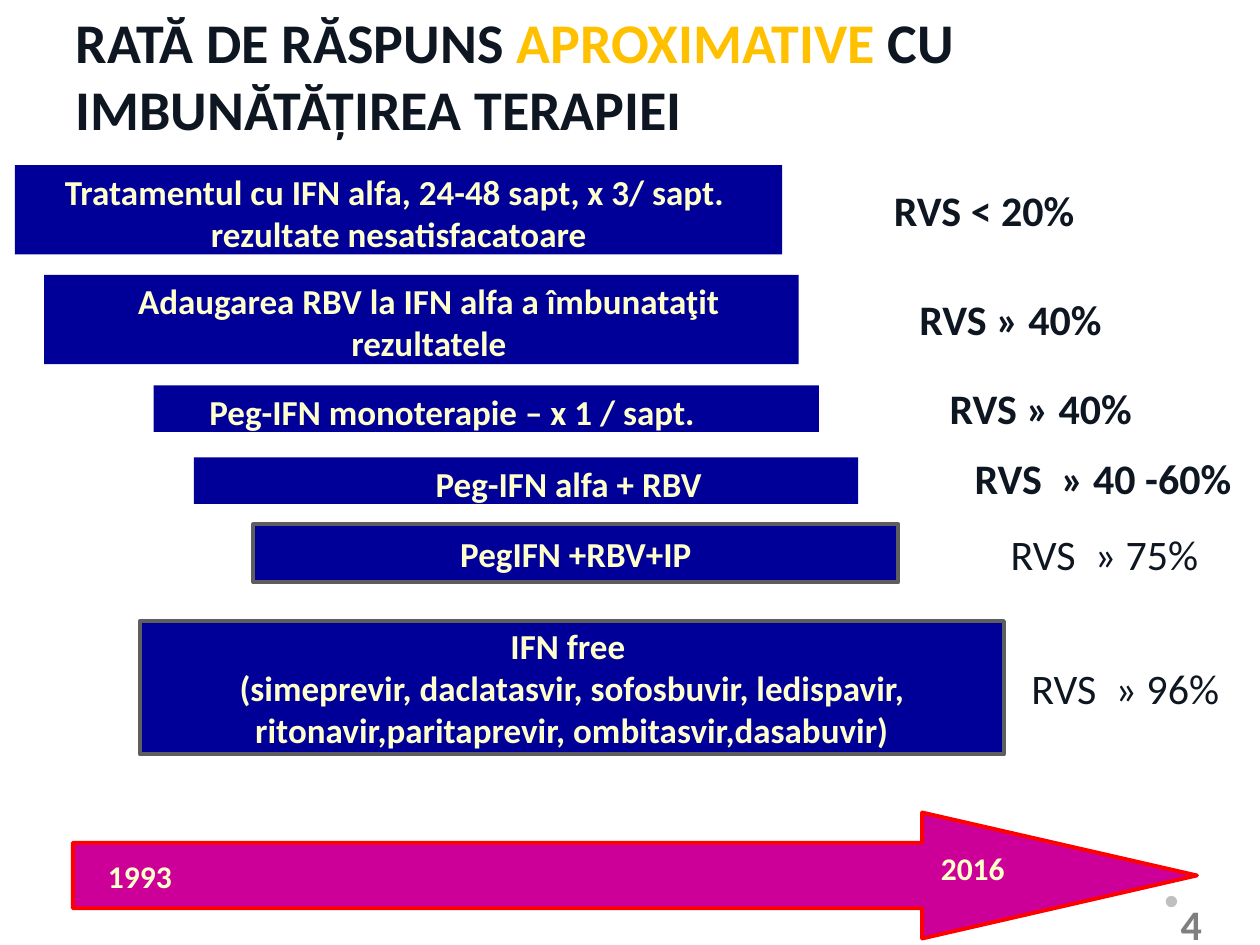
import pptx
import pptx.util
import pptx.dml.color
import pptx.enum.shapes
import pptx.enum.text
from pptx.util import Cm, Pt

RECTANGLE = pptx.enum.shapes.MSO_SHAPE.RECTANGLE
OVAL = pptx.enum.shapes.MSO_SHAPE.OVAL
MIDDLE = pptx.enum.text.MSO_ANCHOR.MIDDLE
TOP = pptx.enum.text.MSO_ANCHOR.TOP
LEFT = pptx.enum.text.PP_ALIGN.LEFT
CENTER = pptx.enum.text.PP_ALIGN.CENTER
NAVY, CREAM, INK, GREY = "000099", "FFFFCC", "0D1621", "7F7F7F"
MAGENTA, RED, AMBER, BORDER = "CC0099", "FF0000", "FFC000", "5E5E5E"

# left, top, width, height, text, left inset, alignment, bordered
THERAPIES = [
    (0.3, 3.33, 15.47, 1.8,
     "Tratamentul cu IFN alfa, 24-48 sapt, x 3/ sapt. \nrezultate nesatisfacatoare", 0, CENTER, False),
    (0.89, 5.54, 15.21, 1.8, "Adaugarea RBV la IFN alfa a îmbunataţit rezultatele", 0.3, CENTER, False),
    (3.1, 7.77, 13.41, 0.94, "Peg-IFN monoterapie – x 1 / sapt.", 1.12, LEFT, False),
    (3.91, 9.22, 13.39, 0.94, "Peg-IFN alfa + RBV ", 1.88, CENTER, False),
    (5.11, 10.57, 13, 1.17, "PegIFN +RBV+IP", 0.25, CENTER, True),
    (2.82, 12.52, 17.42, 2.69,
     "IFN free \n(simeprevir, daclatasvir, sofosbuvir, ledispavir, "
     "ritonavir,paritaprevir, ombitasvir,dasabuvir)", 0.25, CENTER, True),
]
# left, top, width, text, bold
RESPONSE_RATES = [
    (17.3, 3.71, 5.08, "RVS < 20%", True),
    (17.5, 5.92, 5.74, "RVS » 40%", True),
    (18.49, 7.72, 4.98, "RVS » 40%", True),
    (19.1, 9.12, 6.27, "RVS  » 40 -60%", True),
    (19.89, 10.65, 4.75, "RVS  » 75%", False),
    (20.31, 13.36, 4.75, "RVS  » 96%", False),
]
YEARS = [(18.69, 16.99, "2016"), (1.9, 17.14, "1993")]
ARROW = [(1.47, 16.99), (18.59, 16.99), (18.59, 16.38), (24.13, 17.65),
         (18.59, 18.92), (18.59, 18.31), (1.47, 18.31)]


def rgb(value):
    """Return the colour for a hex string."""
    return pptx.dml.color.RGBColor.from_string(value)


def paint(shape, fill, border=None):
    """Give a shape a flat fill and an optional border."""
    shape.shadow.inherit = False
    shape.fill.solid()
    shape.fill.fore_color.rgb = rgb(fill)
    if border:
        shape.line.color.rgb = rgb(border)
        shape.line.width = Pt(2.25)
    else:
        shape.line.fill.background()


def set_font(font, size, color, bold):
    """Format a font."""
    font.name = "Calibri"
    font.size = Pt(size)
    font.bold = bold
    font.color.rgb = rgb(color)


def write(shape, text, size, color, bold=True, align=CENTER, anchor=TOP, insets=(0, 0, 0, 0)):
    """Write lines of text into a shape."""
    frame = shape.text_frame
    frame.word_wrap = True
    frame.vertical_anchor = anchor
    frame.margin_left, frame.margin_top, frame.margin_right, frame.margin_bottom = map(Cm, insets)
    frame.text = text
    for paragraph in frame.paragraphs:
        paragraph.alignment = align
        set_font(paragraph.font, size, color, bold)


def add_title(slide):
    """Fill the title placeholder, with one word highlighted."""
    title = slide.shapes.title
    title.left, title.top, title.width, title.height = Cm(1.27), Cm(-0.08), Cm(22.86), Cm(3.18)
    title.text_frame.vertical_anchor = MIDDLE
    title.text_frame.word_wrap = True
    paragraph = title.text_frame.paragraphs[0]
    paragraph.alignment = LEFT
    for text, color in (("RATĂ DE RĂSPUNS ", INK), ("APROXIMATIVE", AMBER),
                        (" CU IMBUNĂTĂȚIREA TERAPIEI", INK)):
        run = paragraph.add_run()
        run.text = text
        set_font(run.font, 32, color, True)


def add_therapy(slide, left, top, width, height, text, inset, align, bordered):
    """Add the bar of one therapy."""
    bar = slide.shapes.add_shape(RECTANGLE, Cm(left), Cm(top), Cm(width), Cm(height))
    paint(bar, NAVY, BORDER if bordered else None)
    if bordered:
        write(bar, text, 20, CREAM, anchor=MIDDLE, insets=(inset, 0.13, inset, 0.13))
    else:
        write(bar, text, 20, CREAM, align=align, insets=(inset, 0.1, 0, 0))
        bar.text_frame.paragraphs[0].space_before = Pt(2.5)


def add_label(slide, left, top, width, text, size, color, **style):
    """Add a one-line text box."""
    label = slide.shapes.add_textbox(Cm(left), Cm(top), Cm(width), Cm(1.02))
    write(label, text, size, color, **style)


def add_timeline(slide):
    """Add the timeline arrow with its years."""
    builder = slide.shapes.build_freeform(Cm(ARROW[0][0]), Cm(ARROW[0][1]))
    builder.add_line_segments([(Cm(x), Cm(y)) for x, y in ARROW[1:]], close=True)
    paint(builder.convert_to_shape(), MAGENTA, RED)
    for left, top, year in YEARS:
        box = slide.shapes.add_shape(RECTANGLE, Cm(left), Cm(top), Cm(1.84), Cm(1.02))
        paint(box, MAGENTA)
        write(box, year, 18, CREAM, insets=(0, 0.13, 0, 0.13))


def add_page_number(slide):
    """Add the page number and its dot."""
    dot = slide.shapes.add_shape(OVAL, Cm(23.5), Cm(18.06), Cm(0.23), Cm(0.23))
    paint(dot, "BFBFBF")
    add_label(slide, 23.72, 18.11, 1.55, "4", 24, GREY, align=LEFT,
              anchor=MIDDLE, insets=(0.08, 0.13, 0.13, 0.13))


def main():
    """Build the slide and save it."""
    deck = pptx.Presentation()
    deck.slide_width, deck.slide_height = Cm(25.4), Cm(19.05)
    slide = deck.slides.add_slide(deck.slide_layouts[5])
    add_title(slide)
    for therapy in THERAPIES:
        add_therapy(slide, *therapy)
    for left, top, width, text, bold in RESPONSE_RATES:
        add_label(slide, left, top, width, text, 24, INK, bold=bold)
    add_timeline(slide)
    add_page_number(slide)
    deck.save("out.pptx")


if __name__ == "__main__":
    main()
